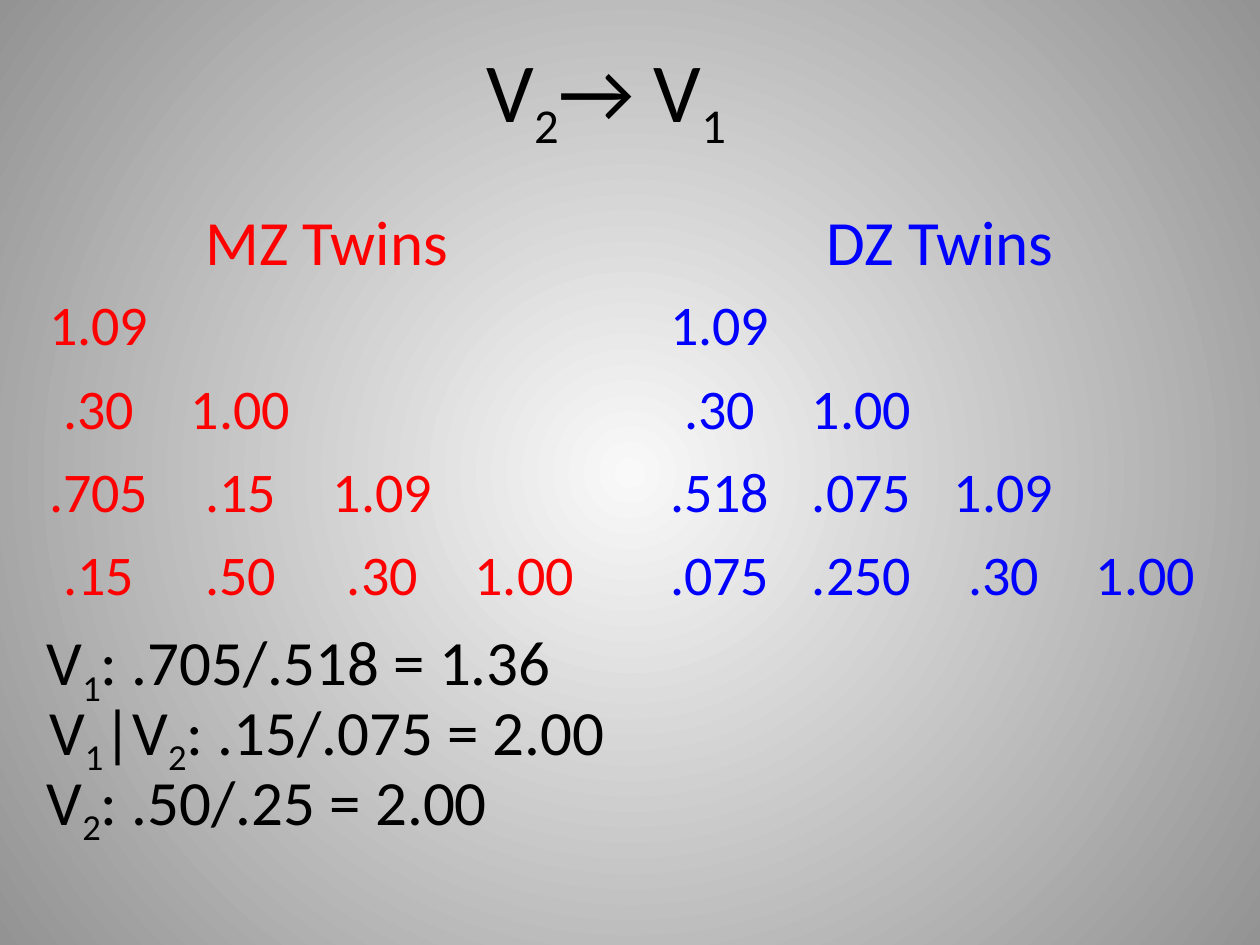
from pptx import Presentation
from pptx.dml.color import RGBColor
from pptx.enum import text
from pptx.oxml import parse_xml
from pptx.oxml.ns import nsdecls, qn
from pptx.util import Cm, Pt

COLORS = {"mz": "FF0000", "dz": "0000FF", "text": "000000",
          "center": "F9F9F9", "edge": "939393"}
FONT = "Calibri"
NO_GRID_STYLE = "{2D5ABB26-0587-4C30-8999-92F81FD0307C}"

TITLE = [("V", 0), ("2", 1), ("→ V", 0), ("1", 1)]
TWINS = [
    {"name": "MZ Twins", "color": "mz", "left": 0.56, "label": (3.89, 5.51),
     "rows": [["1.09"], [".30", "1.00"], [".705", ".15", "1.09"],
              [".15", ".50", ".30", "1.00"]]},
    {"name": "DZ Twins", "color": "dz", "left": 13.08, "label": (16.41, 5.21),
     "rows": [["1.09"], [".30", "1.00"], [".518", ".075", "1.09"],
              [".075", ".250", ".30", "1.00"]]},
]
RATIOS = [
    (0.69, 11.02, [("V", 0), ("1", 1), (": .705/.518 = 1.36", 0)]),
    (0.74, 11.94, [("V", 0), ("1", 1), ("|V", 0), ("2", 1), (": .15/.075 = 2.00", 0)]),
    (0.69, 9.55, [("V", 0), ("2", 1), (": .50/.25 = 2.00", 0)]),
]
LABEL_TOP, LABEL_H = 3.96, 1.8
TABLE_TOP, COL_W, ROW_H = 5.77, 2.86, 1.68
RATIO_TOP, RATIO_STEP = 12.42, 1.41


def set_background(s):
    stops = "".join(
        f'<a:gs pos="{pos}"><a:srgbClr val="{COLORS[name]}"/></a:gs>'
        for pos, name in ((0, "center"), (100000, "edge")))
    bg = parse_xml(
        f'<p:bg {nsdecls("p", "a")}><p:bgPr><a:gradFill rotWithShape="1">'
        f'<a:gsLst>{stops}</a:gsLst><a:path path="circle">'
        '<a:fillToRect l="50000" t="50000" r="50000" b="50000"/></a:path>'
        '</a:gradFill><a:effectLst/></p:bgPr></p:bg>')
    s.element.cSld.insert(0, bg)


def add_runs(p, runs, size, color):
    for content, subscript in runs:
        r = p.add_run()
        r.text = content
        r.font.name = FONT
        r.font.size = Pt(size)
        r.font.color.rgb = RGBColor.from_string(COLORS[color])
        if subscript:
            r.font._element.set("baseline", "-25000")


def write_line(sp, runs, size, color):
    tf = sp.text_frame
    tf.word_wrap = False
    tf.auto_size = text.MSO_AUTO_SIZE.SHAPE_TO_FIT_TEXT
    tf.vertical_anchor = text.MSO_ANCHOR.TOP
    p = tf.paragraphs[0]
    p.alignment = text.PP_ALIGN.LEFT
    add_runs(p, runs, size, color)


def add_line(s, left, top, width, runs, color):
    sp = s.shapes.add_textbox(Cm(left), Cm(top), Cm(width), Cm(LABEL_H))
    write_line(sp, runs, 36, color)


def add_matrix(s, left, rows, color):
    n = len(rows)
    table = s.shapes.add_table(n, n, Cm(left), Cm(TABLE_TOP),
                               Cm(COL_W * n), Cm(ROW_H * n)).table
    table.first_row = table.horz_banding = False
    table._tbl.tblPr.find(qn("a:tableStyleId")).text = NO_GRID_STYLE
    for cell in table.iter_cells():
        cell.fill.background()
    for i, row in enumerate(rows):
        for j, value in enumerate(row):
            p = table.cell(i, j).text_frame.paragraphs[0]
            p.alignment = text.PP_ALIGN.CENTER
            add_runs(p, [(value, 0)], 32, color)


def main():
    prs = Presentation()
    prs.slide_width, prs.slide_height = Cm(25.4), Cm(19.05)
    s = prs.slides.add_slide(prs.slide_layouts[5])
    set_background(s)

    title = s.shapes.title
    title.left, title.top, title.width, title.height = Cm(9.55), Cm(0.64), Cm(5.66), Cm(2.31)
    write_line(title, TITLE, 48, "text")

    for twins in TWINS:
        left, width = twins["label"]
        add_line(s, left, LABEL_TOP, width, [(twins["name"], 0)], twins["color"])
        add_matrix(s, twins["left"], twins["rows"], twins["color"])

    for i, (left, width, runs) in enumerate(RATIOS):
        add_line(s, left, RATIO_TOP + i * RATIO_STEP, width, runs, "text")

    prs.save("out.pptx")


if __name__ == "__main__":
    main()
